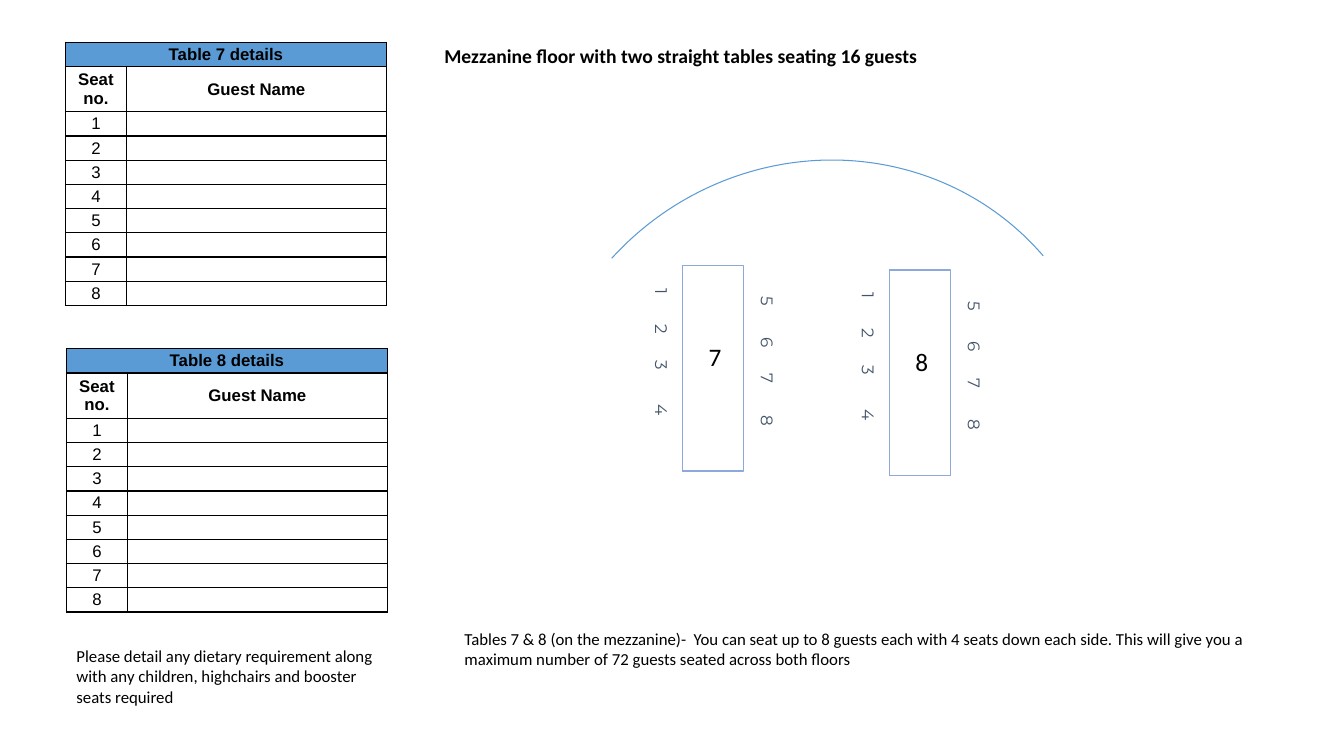
"""Build the mezzanine seating plan slide with its two guest lists."""
import lxml.etree
import pptx
import pptx.dml.color
import pptx.enum.shapes
import pptx.enum.text
import pptx.oxml.ns
import pptx.util

Pt = pptx.util.Pt
qn = pptx.oxml.ns.qn
SubElement = lxml.etree.SubElement
SHAPE = pptx.enum.shapes.MSO_SHAPE
ALIGN = pptx.enum.text.PP_ALIGN
MIDDLE = pptx.enum.text.MSO_ANCHOR.MIDDLE


def color(value):
    return pptx.dml.color.RGBColor.from_string(value)


def write(para, text, size, font="Calibri", ink="000000", bold=False, align=ALIGN.LEFT):
    para.alignment = align
    span = para.add_run()
    span.text = text
    span.font.size = Pt(size)
    span.font.name = font
    span.font.bold = bold
    span.font.color.rgb = color(ink)


deck = pptx.Presentation()
deck.slide_width = Pt(960)
deck.slide_height = Pt(540)
page = deck.slides.add_slide(deck.slide_layouts[6])

seat_sides = [
    ("1234", 375.8, 248.4, (42, 69, 95, 127)),
    ("5678", 451.4, 254.9, (43, 72, 98, 128)),
]
for number, right, down in [("7", 0, 0), ("8", 147.8, 3.3)]:
    table_top = page.shapes.add_shape(
        SHAPE.RECTANGLE, Pt(435.6 + right), Pt(241.2 + down), Pt(146.9), Pt(43.9))
    table_top.rotation = 90
    table_top.shadow.inherit = False
    table_top.fill.background()
    table_top.line.color.rgb = color("8DA9DB")
    table_top.line.width = Pt(1)

    for seats, left, top, stops in seat_sides:
        strip = page.shapes.add_shape(
            SHAPE.RECTANGLE, Pt(left + right), Pt(top + down), Pt(193.7), Pt(28.8))
        strip.rotation = 90
        strip.shadow.inherit = False
        strip.fill.solid()
        strip.fill.fore_color.rgb = color("FFFFFF")
        strip.line.fill.background()
        frame = strip.text_frame
        frame.vertical_anchor = MIDDLE
        frame.margin_left = frame.margin_right = frame.margin_top = frame.margin_bottom = 0
        para = frame.paragraphs[0]
        write(para, "".join("\t" + seat for seat in seats), 12, "Montserrat", "44546A")
        tabs = SubElement(para._p.get_or_add_pPr(), qn("a:tabLst"))
        for stop in stops:
            SubElement(tabs, qn("a:tab"), pos=str(Pt(stop)), algn="ctr")

    box = page.shapes.add_textbox(Pt(499 + right), Pt(240.5 + down), Pt(22.3), Pt(28.8))
    box.text_frame.word_wrap = False
    write(box.text_frame.paragraphs[0], number, 18)

balcony = page.shapes.add_shape(SHAPE.ARC, Pt(378.7), Pt(117.4), Pt(416.9), Pt(402.5))
balcony.adjustments[0] = 157.488
balcony.adjustments[1] = 0
balcony.rotation = 319.3
balcony.shadow.inherit = False
balcony.fill.background()
balcony.line.color.rgb = color("5B9BD5")
balcony.line.width = Pt(0.75)

for number, left, top in [("7", 46.8, 30.2), ("8", 47.5, 249.1)]:
    rows = [(f"Table {number} details", ""), ("Seat no.", "Guest Name")]
    rows += [(str(seat), "") for seat in range(1, 9)]
    guests = page.shapes.add_table(len(rows), 2, Pt(left), Pt(top), Pt(229), Pt(188)).table
    guests.first_row = False
    guests.horz_banding = False
    guests.columns[0].width = Pt(43.5)
    guests.columns[1].width = Pt(185.8)
    for index, values in enumerate(rows):
        guests.rows[index].height = Pt(32.4 if index == 1 else 17.3)
        for column, value in enumerate(values):
            cell = guests.cell(index, column)
            cell.margin_left = cell.margin_right = cell.margin_top = cell.margin_bottom = 0
            cell.vertical_anchor = MIDDLE
            for side in ("a:lnL", "a:lnR", "a:lnT", "a:lnB"):
                border = SubElement(cell._tc.get_or_add_tcPr(), qn(side), w=str(Pt(1)))
                SubElement(SubElement(border, qn("a:solidFill")), qn("a:srgbClr"), val="000000")
            if index == 0:
                cell.fill.solid()
                cell.fill.fore_color.rgb = color("5B9BD5")
            else:
                cell.fill.background()
            para = cell.text_frame.paragraphs[0]
            if value:
                write(para, value, 12, "Arial", bold=index < 2, align=ALIGN.CENTER)
            else:
                SubElement(para._p, qn("a:endParaRPr"), sz="1200")
    guests.cell(0, 0).merge(guests.cell(0, 1))

notes = [
    ("Please detail any dietary requirement along with any children, highchairs and "
     "booster seats required", 47.5, 457.9, 229, 67.7, 12, False),
    ("Tables 7 & 8 (on the mezzanine)-  You can seat up to 8 guests each with 4 seats down "
     "each side. This will give you a maximum number of 72 guests seated across both floors",
     324.7, 445.7, 573.8, 36, 12, False),
    ("Mezzanine floor with two straight tables seating 16 guests",
     310.3, 28.1, 380.9, 24.5, 14, True),
]
for text, left, top, width, height, size, bold in notes:
    box = page.shapes.add_textbox(Pt(left), Pt(top), Pt(width), Pt(height))
    box.text_frame.word_wrap = True
    write(box.text_frame.paragraphs[0], text, size, bold=bold)

deck.save("out.pptx")
